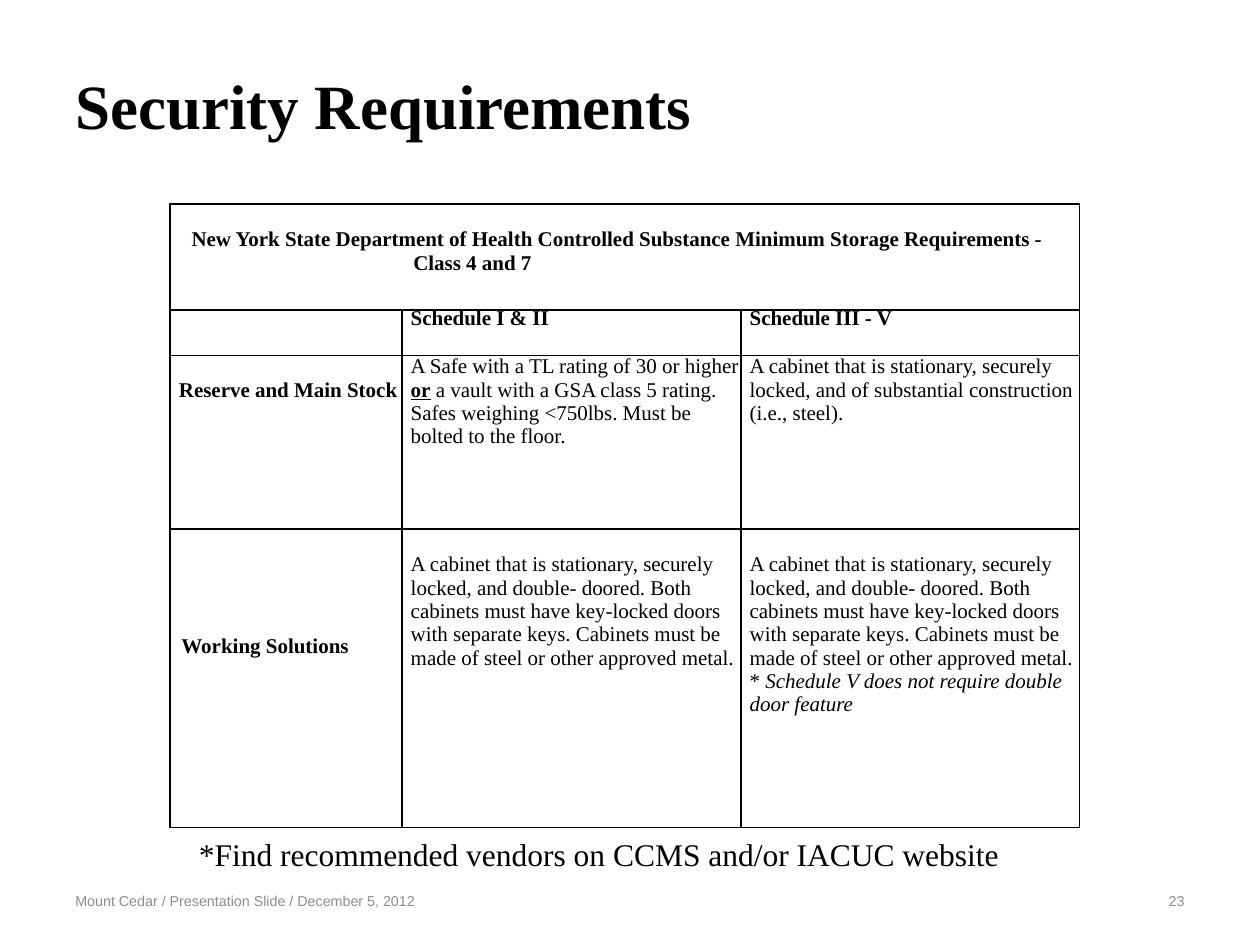
"""Build the slide on security requirements for controlled substances."""
from lxml.etree import SubElement
from pptx import Presentation
from pptx.dml.color import RGBColor
from pptx.enum.text import MSO_ANCHOR, PP_ALIGN
from pptx.oxml.ns import qn
from pptx.util import Inches, Pt

COLORS = {"ink": "000000", "muted": "8C8C8C", "paper": "FFFFFF"}
SERIF, SANS = "Times New Roman", "Arial"
WIDTH, HEIGHT = 10, 7.5
LINE = 0.19
INDENT = 0.07

BOLD = {"bold": True}
DOUBLE_DOOR = (
    "A cabinet that is stationary, securely locked, and double- doored. "
    "Both cabinets must have key-locked doors with separate keys. "
    "Cabinets must be made of steel or other approved metal."
)

TEXTS = [
    {"at": (0.5, 0.48, 9, 0.68), "text": "Security Requirements",
     "font": {"name": SERIF, "size": Pt(36), "bold": True}},
    {"at": (0.5, 6.95, 3.17, 0.4), "color": "muted", "anchor": MSO_ANCHOR.MIDDLE,
     "text": "Mount Cedar / Presentation Slide / December 5, 2012",
     "font": {"name": SANS, "size": Pt(8.2)}},
    {"at": (7.17, 6.95, 2.33, 0.4), "color": "muted", "anchor": MSO_ANCHOR.MIDDLE,
     "text": "23", "align": PP_ALIGN.RIGHT,
     "font": {"name": SANS, "size": Pt(8.2)}},
    {"at": (1.48, 6.58, 6.62, 0.4), "wrap": False,
     "text": "*Find recommended vendors on CCMS and/or IACUC website",
     "font": {"name": SERIF, "size": Pt(18)}},
]

TABLE_AT = (1.35, 1.62)
COLUMNS = (1.84, 2.69, 2.69)
ROWS = (0.84, 0.36, 1.38, 2.37)
CELLS = {
    (0, 0): {"top": LINE, "indent": (1.93, -1.76), "paragraphs": [[
        ("New York State Department of Health Controlled Substance "
         "Minimum Storage Requirements - Class 4 and 7", BOLD)]]},
    (1, 1): {"spacing": 11.7, "paragraphs": [[("Schedule I & II", BOLD)]]},
    (1, 2): {"spacing": 11.7, "paragraphs": [[("Schedule III - V", BOLD)]]},
    (2, 0): {"top": LINE, "paragraphs": [[("Reserve and Main Stock", BOLD)]]},
    (2, 1): {"paragraphs": [[
        ("A Safe with a TL rating of 30 or higher ", {}),
        ("or", {"bold": True, "underline": True}),
        (" a vault with a GSA class 5 rating. Safes weighing <750lbs. "
         "Must be bolted to the floor.", {})]]},
    (2, 2): {"paragraphs": [[
        ("A cabinet that is stationary, securely locked, and of "
         "substantial construction (i.e., steel).", {})]]},
    (3, 0): {"top": 0.84, "indent": (0.09, 0),
             "paragraphs": [[("Working Solutions", BOLD)]]},
    (3, 1): {"top": LINE, "paragraphs": [[(DOUBLE_DOOR, {})]]},
    (3, 2): {"top": LINE, "paragraphs": [
        [(DOUBLE_DOOR, {})],
        [("* ", {}),
         ("Schedule V does not require double door feature", {"italic": True})]]},
}


def rgb(name):
    return RGBColor.from_string(COLORS[name])


def add_run(p, text, color="ink", **font):
    r = p.add_run()
    r.text = text
    r.font.color.rgb = rgb(color)
    for key, value in font.items():
        setattr(r.font, key, value)


def add_text(s, item):
    tf = s.shapes.add_textbox(*map(Inches, item["at"])).text_frame
    tf.word_wrap = item.get("wrap", True)
    tf.vertical_anchor = item.get("anchor", MSO_ANCHOR.TOP)
    p = tf.paragraphs[0]
    p.alignment = item.get("align", PP_ALIGN.LEFT)
    add_run(p, item["text"], item.get("color", "ink"), **item["font"])


def add_borders(cell):
    tc_pr = cell._tc.get_or_add_tcPr()
    for side in "LRTB":
        ln = SubElement(tc_pr, qn(f"a:ln{side}"), w=str(Pt(1)))
        fill = SubElement(ln, qn("a:solidFill"))
        SubElement(fill, qn("a:srgbClr"), val=COLORS["ink"])


def fill_cell(cell, top=0, indent=(INDENT, 0), spacing=None, paragraphs=()):
    cell.margin_left = cell.margin_right = cell.margin_bottom = 0
    cell.margin_top = Inches(top)
    for i, runs in enumerate(paragraphs):
        tf = cell.text_frame
        p = tf.add_paragraph() if i else tf.paragraphs[0]
        p_pr = p._p.get_or_add_pPr()
        for key, value in zip(("marL", "indent"), indent):
            p_pr.set(key, str(Inches(value)))
        if spacing:
            p.line_spacing = Pt(spacing)
        for text, font in runs:
            add_run(p, text, name=SERIF, size=Pt(12), **font)


def add_requirements(s):
    size = (sum(COLUMNS), sum(ROWS))
    table = s.shapes.add_table(
        len(ROWS), len(COLUMNS), *map(Inches, TABLE_AT + size)).table
    table.first_row = table.horz_banding = False
    for column, width in zip(table.columns, COLUMNS):
        column.width = Inches(width)
    for row, height in zip(table.rows, ROWS):
        row.height = Inches(height)
    table.cell(0, 0).merge(table.cell(0, len(COLUMNS) - 1))
    for r in range(len(ROWS)):
        for c in range(len(COLUMNS)):
            cell = table.cell(r, c)
            add_borders(cell)
            cell.fill.solid()
            cell.fill.fore_color.rgb = rgb("paper")
            fill_cell(cell, **CELLS.get((r, c), {}))


def main():
    prs = Presentation()
    prs.slide_width, prs.slide_height = Inches(WIDTH), Inches(HEIGHT)
    s = prs.slides.add_slide(prs.slide_layouts[6])
    add_requirements(s)
    for item in TEXTS:
        add_text(s, item)
    prs.save("out.pptx")


if __name__ == "__main__":
    main()
